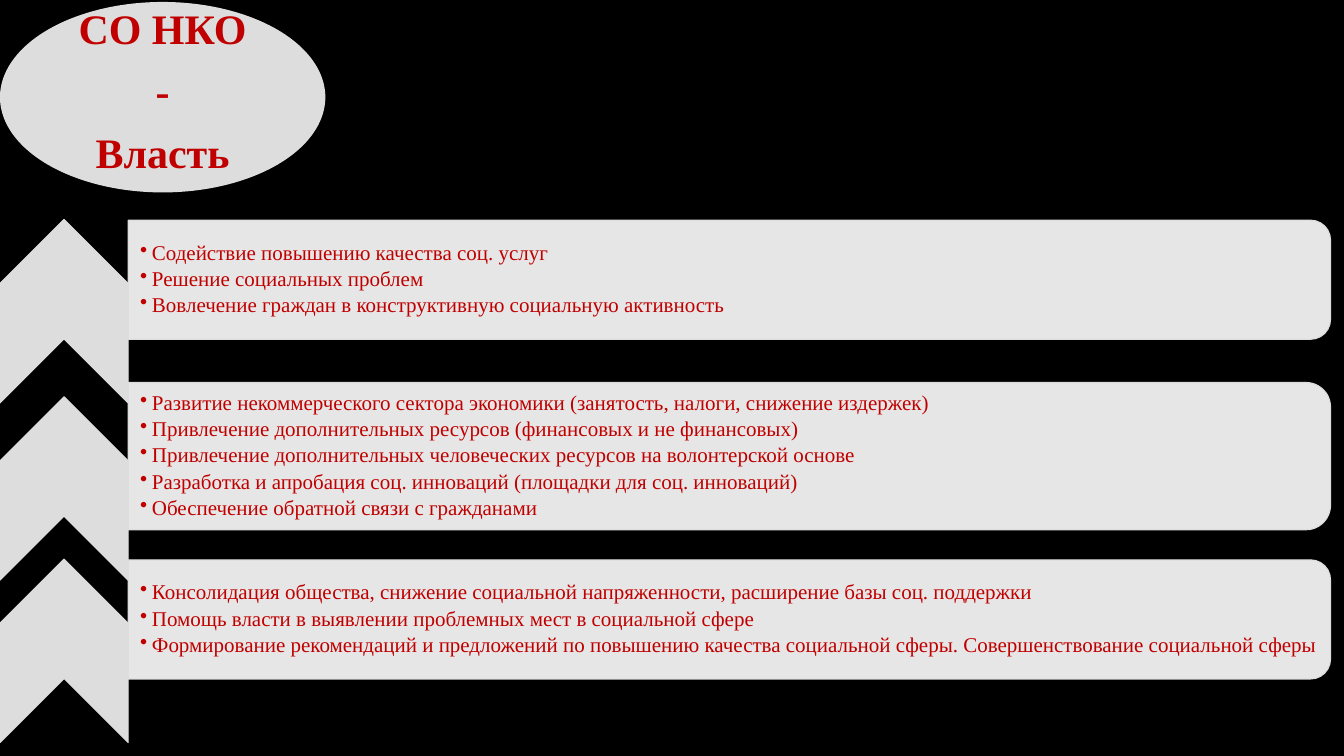
from lxml import etree
from pptx import Presentation
from pptx import util as u
from pptx.dml.color import RGBColor
from pptx.enum import shapes, text
from pptx.oxml.ns import qn

GREY = "DDDDDD"
RED = "C00000"
FONT = "Times New Roman"
CHEVRON_WIDTH, CHEVRON_HEIGHT = 3.23, 4.62
BAR_WIDTH, TEXT_WIDTH = 30.3, 30.15
BENEFITS = [
    (5.53, 5.55, 3, [
        "Содействие повышению качества соц. услуг",
        "Решение социальных проблем",
        "Вовлечение граждан в конструктивную социальную активность",
    ]),
    (10, 9.64, 3.71, [
        "Развитие некоммерческого сектора экономики (занятость, налоги, снижение издержек)",
        "Привлечение дополнительных ресурсов (финансовых и не финансовых)",
        "Привлечение дополнительных человеческих ресурсов на волонтерской основе",
        "Разработка и апробация соц. инноваций (площадки для соц. инноваций)",
        "Обеспечение обратной связи с гражданами",
    ]),
    (14.09, 14.11, 3, [
        "Консолидация общества, снижение социальной напряженности, расширение базы соц. поддержки",
        "Помощь власти в выявлении проблемных мест в социальной сфере",
        "Формирование рекомендаций и предложений по повышению качества социальной сферы. "
        "Совершенствование социальной сферы",
    ]),
]


def color(value):
    return RGBColor.from_string(value)


def apply_format(target, values):
    for name, value in values.items():
        setattr(target, name, value)


def add_filled(slide, kind, box, fill, rotation=0, outlined=True):
    left, top, width, height = box
    if rotation:
        left, top = left + (width - height) / 2, top + (height - width) / 2
        width, height = height, width
    shape = slide.shapes.add_shape(kind, u.Cm(left), u.Cm(top), u.Cm(width), u.Cm(height))
    shape.rotation = rotation
    shape.shadow.inherit = False
    shape.fill.solid()
    shape.fill.fore_color.rgb = color(fill)
    if outlined:
        shape.line.color.rgb = color(GREY)
        shape.line.width = u.Pt(0.85)
    else:
        shape.line.fill.background()
    return shape


def add_lines(slide, box, lines, margins, paragraph_format, font_format, bullet=False):
    frame = slide.shapes.add_textbox(*(u.Cm(length) for length in box)).text_frame
    sides = ("margin_left", "margin_top", "margin_right", "margin_bottom")
    apply_format(frame, dict(zip(sides, map(u.Cm, margins))))
    apply_format(frame, {"word_wrap": True, "vertical_anchor": text.MSO_ANCHOR.MIDDLE})
    for index, line in enumerate(lines):
        paragraph = frame.paragraphs[0] if index == 0 else frame.add_paragraph()
        paragraph.text = line
        apply_format(paragraph, {"line_spacing": 0.9, **paragraph_format})
        if bullet:
            properties = paragraph._p.get_or_add_pPr()
            properties.set("marL", str(u.Cm(0.3)))
            properties.set("indent", str(-u.Cm(0.3)))
            etree.SubElement(properties, qn("a:buChar")).set("char", "•")
        apply_format(paragraph.font, {"name": FONT, **font_format})
        paragraph.font.color.rgb = color(RED)


def add_benefit(slide, left, chevron_top, bar_top, bar_height, lines):
    chevron_box = (left, chevron_top, CHEVRON_WIDTH, CHEVRON_HEIGHT)
    add_filled(slide, shapes.MSO_SHAPE.CHEVRON, chevron_box, GREY, 270)
    bar_left = left + CHEVRON_WIDTH
    bar = add_filled(slide, shapes.MSO_SHAPE.ROUND_2_SAME_RECTANGLE,
                     (bar_left, bar_top, BAR_WIDTH, bar_height), "FFFFFF", 90)
    fill_color = bar._element.spPr.find(qn("a:solidFill"))[0]
    etree.SubElement(fill_color, qn("a:alpha")).set("val", "90000")
    add_lines(slide, (bar_left, bar_top, TEXT_WIDTH, bar_height), lines,
              (0.3, 0.03, 0.03, 0.03), {"space_after": u.Pt(2.6)},
              {"size": u.Pt(15)}, bullet=True)


def add_title(slide, left, top, width, height):
    add_filled(slide, shapes.MSO_SHAPE.OVAL, (left, top, width, height), GREY, outlined=False)
    add_lines(slide, (left + 1.2, top + 1, width - 2.4, height - 2.2),
              ["СО НКО", "-", "Власть"], (0.05,) * 4,
              {"space_after": u.Pt(12), "alignment": text.PP_ALIGN.CENTER},
              {"size": u.Pt(30), "bold": True})


def main():
    presentation = Presentation()
    presentation.slide_width = u.Cm(33.87)
    presentation.slide_height = u.Cm(19.05)
    slide = presentation.slides.add_slide(presentation.slide_layouts[6])
    slide.background.fill.solid()
    slide.background.fill.fore_color.rgb = color("000000")
    for benefit in BENEFITS:
        add_benefit(slide, 0, *benefit)
    add_title(slide, 0, 0.05, 8.2, 4.8)
    presentation.save("out.pptx")


if __name__ == "__main__":
    main()
